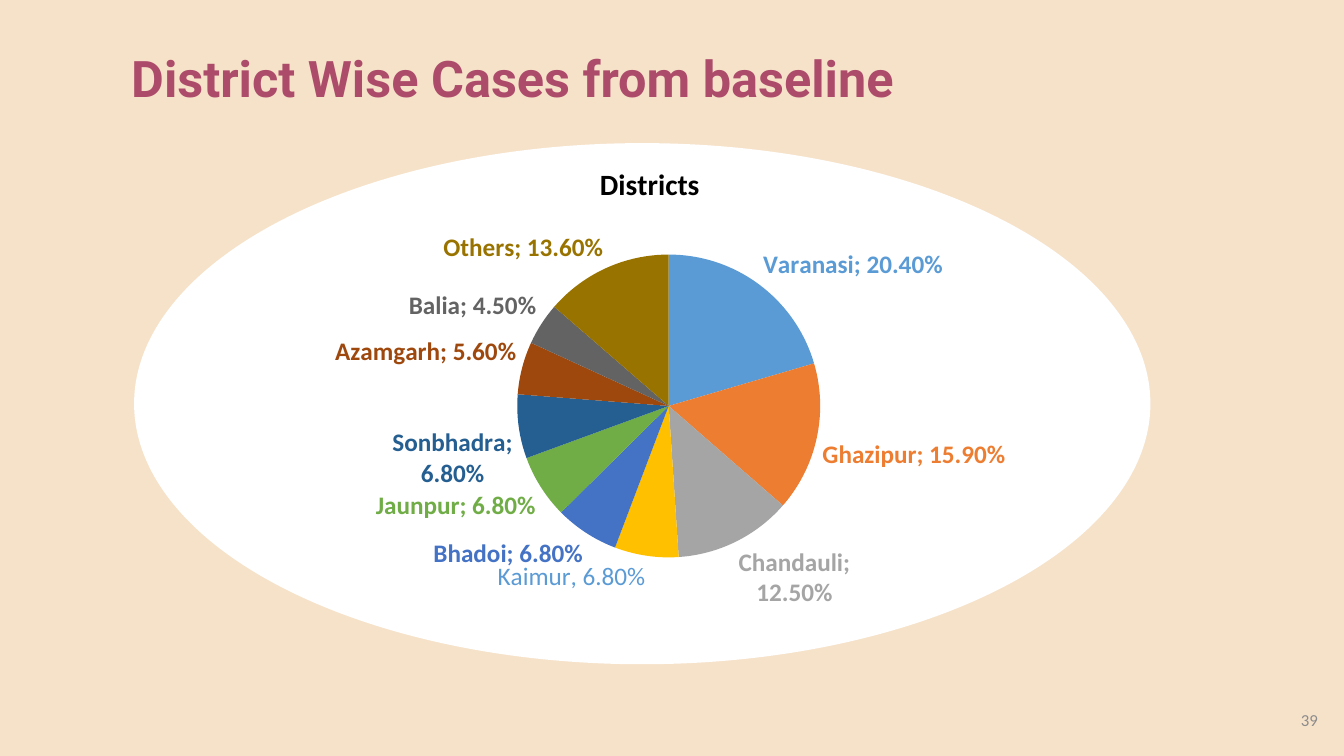
import pptx
import pptx.util
import pptx.dml.color
import pptx.oxml
import pptx.oxml.ns
import pptx.chart.data
import pptx.enum.chart
import pptx.enum.shapes
import pptx.enum.text
from dataclasses import dataclass

Inches = pptx.util.Inches
Pt = pptx.util.Pt
Align = pptx.enum.text.PP_ALIGN


@dataclass(frozen=True)
class Theme:
    sand: str = "F6E2C9"
    white: str = "FFFFFF"
    rose: str = "AC4B6A"
    gray: str = "8C8C8C"
    black: str = "000000"
    blue: str = "5B9BD5"
    head: int = 36
    title: int = 21
    label: int = 18
    note: int = 12
    sans: str = "Calibri"
    bold: str = "Roboto"


theme = Theme()

SHARES = [
    ("Varanasi", 0.204, "5B9BD5"),
    ("Ghazipur", 0.159, "ED7D31"),
    ("Chandauli", 0.125, "A5A5A5"),
    ("Kaimur", 0.068, "FFC000"),
    ("Bhadoi", 0.068, "4472C4"),
    ("Jaunpur", 0.068, "70AD47"),
    ("Sonbhadra", 0.068, "255E91"),
    ("Azamgarh", 0.056, "9E480E"),
    ("Balia", 0.045, "636363"),
    ("Others", 0.136, "997300"),
]
PLAIN = "Kaimur"


def apply(item, values):
    for name, value in values.items():
        setattr(item, name, value)


def rgb(color):
    return pptx.dml.color.RGBColor.from_string(color)


def style(font, size, color, bold=False, face=theme.sans):
    apply(font, {"size": Pt(size), "bold": bold, "name": face})
    font.color.rgb = rgb(color)


def paint(fill, color):
    fill.solid()
    fill.fore_color.rgb = rgb(color)


def node(tag, body="", attrs=""):
    spaces = pptx.oxml.ns.nsdecls("c", "a")
    return pptx.oxml.parse_xml(f"<c:{tag} {spaces} {attrs}>{body}</c:{tag}>")


def layout(**parts):
    body = "".join(f'<c:{key} val="{value}"/>' for key, value in parts.items())
    return node("layout", f"<c:manualLayout>{body}</c:manualLayout>")


def add_oval(slide, box, color):
    kind = pptx.enum.shapes.MSO_SHAPE.OVAL
    oval = slide.shapes.add_shape(kind, *map(Inches, box))
    oval.shadow.inherit = False
    paint(oval.fill, color)
    oval.line.fill.background()


def add_text(slide, box, text, align, **look):
    frame = slide.shapes.add_textbox(*map(Inches, box)).text_frame
    apply(frame, {
        "word_wrap": True,
        "vertical_anchor": pptx.enum.text.MSO_ANCHOR.MIDDLE,
    })
    line = frame.paragraphs[0]
    apply(line, {"text": text, "alignment": align, "line_spacing": 0.9})
    style(line.runs[0].font, **look)


def add_label(point, name, color):
    label = point.data_label
    plain = name == PLAIN
    style(label.font, theme.label, theme.blue if plain else color, not plain)
    label.position = pptx.enum.chart.XL_LABEL_POSITION.OUTSIDE_END


def tune(chart, rows):
    root = chart.element
    for label, (name, share, color) in zip(root.xpath(".//c:dLbl"), rows):
        form = node("numFmt", attrs='formatCode="0.00%" sourceLinked="0"')
        label.xpath("./c:idx")[0].addnext(form)
        label.xpath("./c:showCatName")[0].set("val", "1")
        label.append(node("separator", ", " if name == PLAIN else "; "))
    area = root.xpath(".//c:plotArea")[0]
    for old in area.xpath("./c:layout"):
        area.remove(old)
    area.insert(0, layout(layoutTarget="inner", xMode="edge", yMode="edge",
                          x=0.36, y=0.22, w=0.32, h=0.64))
    root.xpath("./c:chart")[0].addnext(
        node("spPr", "<a:noFill/><a:ln><a:noFill/></a:ln>"))


def add_pie(slide, box, title, rows):
    data = pptx.chart.data.CategoryChartData(number_format="0.00%")
    data.categories = [name for name, share, color in rows]
    data.add_series(title, [share for name, share, color in rows])
    kind = pptx.enum.chart.XL_CHART_TYPE.PIE
    chart = slide.shapes.add_chart(kind, *map(Inches, box), data).chart
    style(chart.font, theme.label, theme.black)
    apply(chart, {"has_legend": False, "has_title": True})
    line = chart.chart_title.text_frame.paragraphs[0]
    line.text = title
    style(line.runs[0].font, theme.title, theme.black, True)
    plot = chart.plots[0]
    plot.vary_by_categories = True
    for index, (name, share, color) in enumerate(rows):
        point = plot.series[0].points[index]
        paint(point.format.fill, color)
        add_label(point, name, color)
    tune(chart, rows)


def main():
    deck = pptx.Presentation()
    apply(deck, {"slide_width": Inches(13.33), "slide_height": Inches(7.5)})
    slide = deck.slides.add_slide(deck.slide_layouts[6])
    paint(slide.background.fill, theme.sand)
    add_oval(slide, (1.33, 1.42, 10.08, 5.17), theme.white)
    add_text(slide, (1, 0.42, 8.17, 0.78), "District Wise Cases from baseline",
             Align.CENTER, size=theme.head, color=theme.rose, bold=True,
             face=theme.bold)
    add_pie(slide, (1.75, 1.42, 9.39, 4.83), "Districts", SHARES)
    add_text(slide, (10.17, 6.95, 3, 0.4), "39", Align.RIGHT,
             size=theme.note, color=theme.gray)
    deck.save("out.pptx")


if __name__ == "__main__":
    main()
